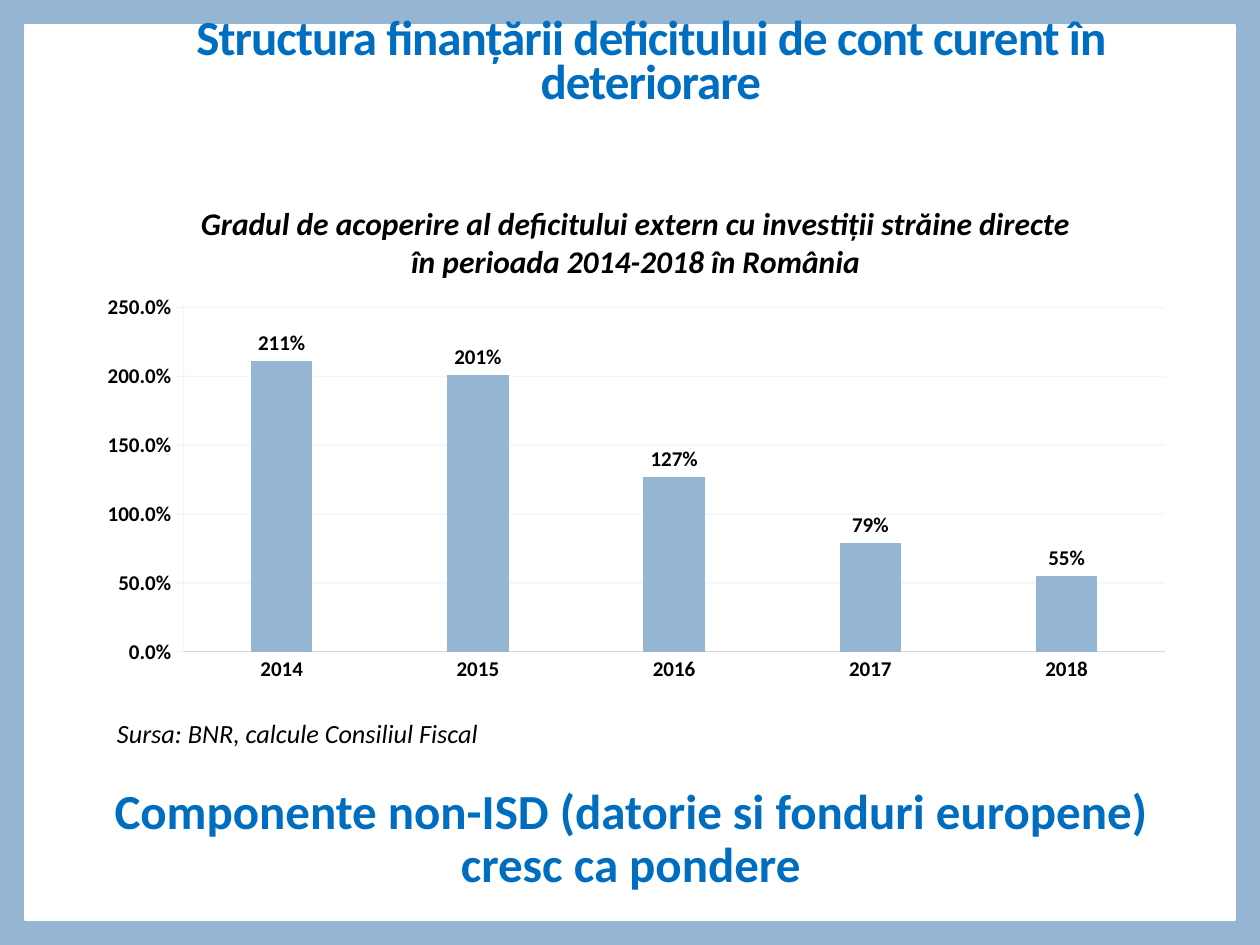
from lxml.etree import SubElement
from pptx import Presentation
from pptx.chart.data import CategoryChartData
from pptx.dml.color import RGBColor
from pptx.enum.chart import XL_CHART_TYPE, XL_LABEL_POSITION, XL_TICK_MARK
from pptx.enum.shapes import MSO_SHAPE
from pptx.enum.text import MSO_ANCHOR, MSO_AUTO_SIZE, PP_ALIGN
from pptx.oxml import parse_xml
from pptx.oxml.ns import nsdecls, qn
from pptx.util import Inches, Pt

HEADING = "Structura finanțării deficitului de cont curent în deteriorare"
CONCLUSION = "Componente non-ISD (datorie si fonduri europene) cresc ca pondere"
SOURCE_NOTE = "Sursa: BNR, calcule Consiliul Fiscal"
CHART_TITLE = ("Gradul de acoperire al deficitului extern cu investiții străine directe "
               "în perioada 2014-2018 în România")
COVERAGE = {"2014": 2.11, "2015": 2.01, "2016": 1.27, "2017": 0.79, "2018": 0.55}
PLOT_LAYOUT = {"x": 0.09, "y": 0.25, "w": 0.89, "h": 0.67}

FONT = "Calibri"
PALE_BLUE, BLUE, GRID_BLUE = "94B6D2", "006EC0", "0070C0"
WHITE, BLACK, GREY = "FFFFFF", "000000", "D9D9D9"


def paint(fill, color):
    fill.solid()
    fill.fore_color.rgb = RGBColor.from_string(color)


def style(font, size, color=BLACK, bold=False, italic=False):
    font.name, font.size, font.bold, font.italic = FONT, Pt(size), bold, italic
    font.color.rgb = RGBColor.from_string(color)


def draw_line(line, color, width=0.75, opacity=None):
    paint(line.fill, color)
    line.width = Pt(width)
    if opacity is not None:
        rgb = line.fill._xPr.find(".//" + qn("a:srgbClr"))
        SubElement(rgb, qn("a:alpha"), val=str(opacity * 1000))


def place(shape, left, top, width, height):
    shape.left, shape.top = Inches(left), Inches(top)
    shape.width, shape.height = Inches(width), Inches(height)


def write(shape, text, size, color, anchor, align, spacing=None, **emphasis):
    frame = shape.text_frame
    frame.word_wrap = True
    frame.auto_size = MSO_AUTO_SIZE.NONE
    frame.vertical_anchor = anchor
    paragraph = frame.paragraphs[0]
    paragraph.alignment = align
    paragraph.line_spacing = spacing
    run = paragraph.add_run()
    run.text = text
    style(run.font, size, color, **emphasis)
    return run


def add_panel(slide):
    panel = slide.shapes.add_shape(
        MSO_SHAPE.RECTANGLE, Inches(0.2), Inches(0.2), Inches(9.6), Inches(7.1))
    panel.shadow.inherit = False
    paint(panel.fill, WHITE)
    draw_line(panel.line, WHITE, 1)
    slide.shapes._spTree.insert(2, panel._element)


def add_coverage_chart(slide):
    data = CategoryChartData(number_format="0%")
    data.categories = list(COVERAGE)
    data.add_series("Series 1", list(COVERAGE.values()))
    chart = slide.shapes.add_chart(
        XL_CHART_TYPE.COLUMN_CLUSTERED,
        Inches(0.67), Inches(1.42), Inches(8.75), Inches(4.08), data).chart
    style(chart.font, 10)
    chart.has_legend = False

    chart.has_title = True
    title_run = chart.chart_title.text_frame.paragraphs[0].add_run()
    title_run.text = CHART_TITLE
    style(title_run.font, 18, bold=True, italic=True)
    chart.chart_title.include_in_layout = False

    plot = chart.plots[0]
    plot.gap_width, plot.overlap = 219, -27
    plot.vary_by_categories = False
    columns = plot.series[0]
    paint(columns.format.fill, PALE_BLUE)
    labels = columns.data_labels
    labels.show_value = True
    labels.position = XL_LABEL_POSITION.OUTSIDE_END
    labels.number_format, labels.number_format_is_linked = "0%", False

    years, shares = chart.category_axis, chart.value_axis
    for font in (labels.font, years.tick_labels.font, shares.tick_labels.font):
        style(font, 12, bold=True)
    years.major_tick_mark = XL_TICK_MARK.NONE
    draw_line(years.format.line, GREY)
    shares.minimum_scale, shares.maximum_scale, shares.major_unit = 0, 2.5, 0.5
    shares.major_tick_mark = XL_TICK_MARK.OUTSIDE
    shares.tick_labels.number_format = "0.0%"
    shares.tick_labels.number_format_is_linked = False
    for line in (shares.format.line, shares.major_gridlines.format.line):
        draw_line(line, GRID_BLUE, opacity=5)

    plot_area = chart._chartSpace.chart.plotArea
    for layout in plot_area.findall(qn("c:layout")):
        plot_area.remove(layout)
    modes = '<c:layoutTarget val="inner"/><c:xMode val="edge"/><c:yMode val="edge"/>'
    sizes = "".join(f'<c:{side} val="{share}"/>' for side, share in PLOT_LAYOUT.items())
    plot_area.insert(0, parse_xml(
        f'<c:layout {nsdecls("c")}><c:manualLayout>{modes}{sizes}</c:manualLayout></c:layout>'))


def main():
    deck = Presentation()
    deck.slide_width, deck.slide_height = Inches(10), Inches(7.5)
    slide = deck.slides.add_slide(deck.slide_layouts[5])
    paint(slide.background.fill, PALE_BLUE)
    add_panel(slide)

    conclusion = slide.shapes.title
    place(conclusion, 0.42, 6.17, 9.17, 1)
    write(conclusion, CONCLUSION, 28, BLUE, MSO_ANCHOR.MIDDLE, PP_ALIGN.CENTER, 0.9, bold=True)

    heading = slide.shapes.add_textbox(Inches(0.58), Inches(0.08), Inches(9.17), Inches(0.83))
    heading_run = write(heading, HEADING, 28, BLUE, MSO_ANCHOR.BOTTOM, PP_ALIGN.CENTER,
                        0.75, bold=True)
    heading_run.font._element.set("spc", "-50")

    add_coverage_chart(slide)

    source_note = slide.shapes.add_textbox(Inches(0.83), Inches(5.64), Inches(4.86), Inches(0.35))
    write(source_note, SOURCE_NOTE, 15, BLACK, MSO_ANCHOR.TOP, PP_ALIGN.LEFT, italic=True)
    source_note.text_frame.auto_size = MSO_AUTO_SIZE.SHAPE_TO_FIT_TEXT

    deck.save("out.pptx")


if __name__ == "__main__":
    main()
